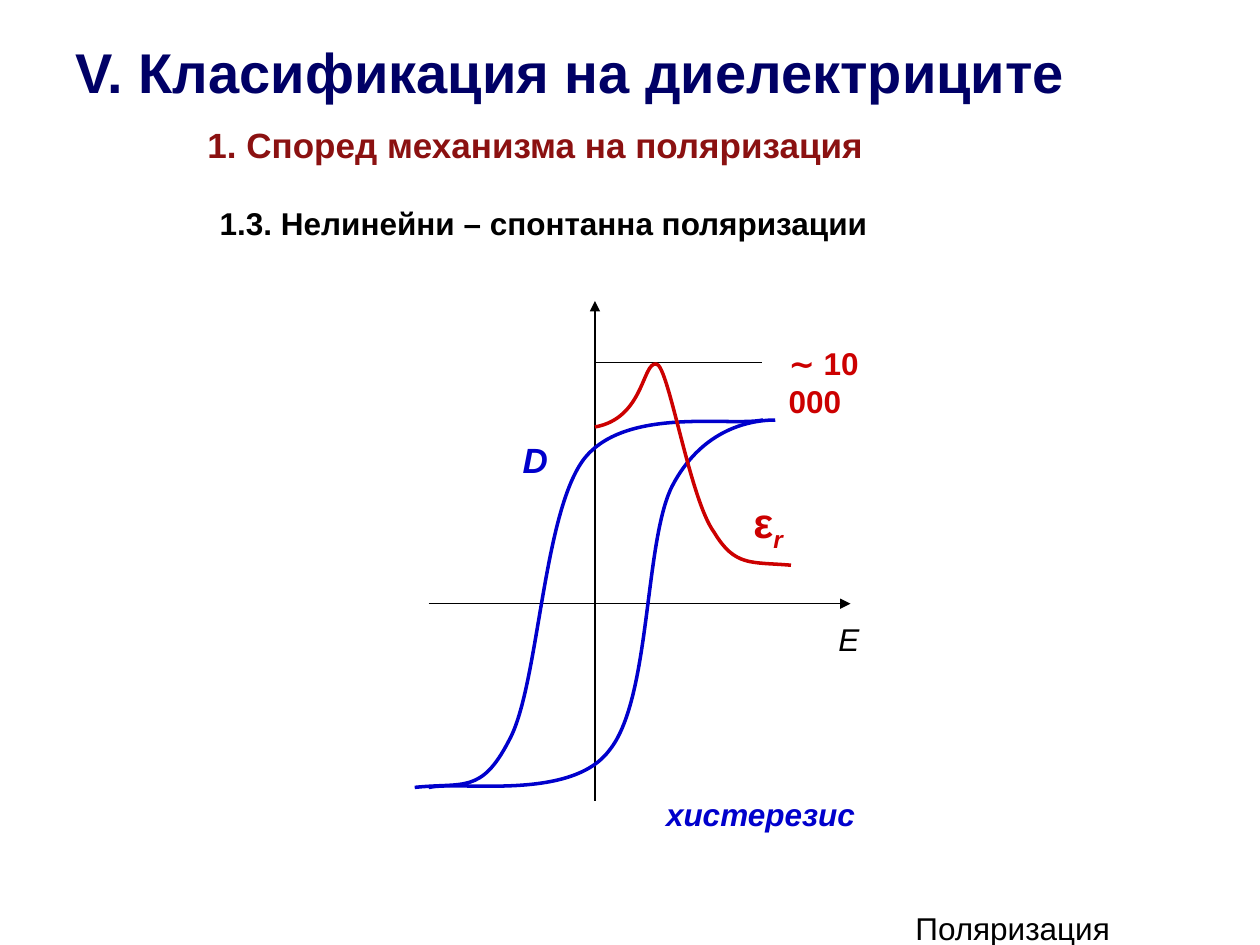
from pptx import Presentation
from pptx.dml.color import RGBColor
from pptx.enum.shapes import MSO_CONNECTOR
from pptx.oxml.ns import qn
from pptx.util import Pt
from lxml.etree import SubElement

BLACK = RGBColor(0, 0, 0)
NAVY = RGBColor(0x00, 0x00, 0x66)
MAROON = RGBColor(0x8B, 0x11, 0x11)
RED = RGBColor(0xCC, 0x00, 0x00)
BLUE = RGBColor(0x00, 0x00, 0xCC)

deck = Presentation()
deck.slide_width, deck.slide_height = Pt(720), Pt(540)
slide = deck.slides.add_slide(deck.slide_layouts[6])
shapes = slide.shapes


def style(run, size, color, bold, italic):
    font = run.font
    font.name, font.size = "Arial", Pt(size)
    font.bold, font.italic = bold, italic
    font.color.rgb = color


def label(text, left, top, width, height, size, color, bold=True, italic=False):
    box = shapes.add_textbox(Pt(left), Pt(top), Pt(width), Pt(height))
    frame = box.text_frame
    frame.word_wrap = True
    frame.text = text
    para = frame.paragraphs[0]
    style(para.runs[0], size, color, bold, italic)
    return para


label("Поляризация", 516, 516, 168, 19.5, 18, BLACK, False)
label("V. Класификация на диелектриците", 36, 18, 582, 45.5, 32, NAVY)
label("1. Според механизма на поляризация", 111.5, 67, 391, 31, 20, MAROON)
label("1.3. Нелинейни – спонтанна поляризации", 118.5, 113, 410, 29, 18, BLACK)
label("E", 472, 350.5, 27, 29, 18, BLACK, False, True)
para = label("ε", 423.5, 280, 58, 36, 24, RED)
sub = para.add_run()
sub.text = "r"
style(sub, 24, RED, True, True)
sub.font._element.set("baseline", "-25000")
label("D", 291.5, 247, 29, 31, 20, BLUE, True, True)
label("∼ 10 000", 443.5, 193, 84, 29, 18, RED)

for x1, y1, x2, y2, arrow in [
    (245, 345, 486, 345, True),
    (340, 457.5, 340, 172, True),
    (340, 207, 435.5, 207, False),
]:
    line = shapes.add_connector(MSO_CONNECTOR.STRAIGHT, Pt(x1), Pt(y1), Pt(x2), Pt(y2))
    line.line.color.rgb = BLACK
    line.line.width = Pt(0.75)
    if arrow:
        tip = SubElement(line.line._get_or_add_ln(), qn("a:tailEnd"))
        tip.set("type", "triangle")
    SubElement(line._element.spPr, qn("a:effectLst"))

upper = [
    (435.5, 240), (418.5, 244), (358.5, 232), (334.5, 262.5), (310.5, 293),
    (307.5, 391.5), (291, 423), (275, 454.5), (265, 447), (237, 450),
]
lower = [
    (245, 450), (262, 446.5), (325.5, 457.5), (348.5, 429), (372, 400.5),
    (368.5, 310.5), (384.5, 278.5), (400.5, 247), (426, 240.5), (443, 240),
]
peak = [
    (340, 243.5), (368.5, 239), (367, 207), (375, 207.5), (381.5, 208),
    (394.5, 285, ), (407.5, 304.5), (420.5, 324), (429, 321), (452, 323),
]

for points, color in [(upper, BLUE), (lower, BLUE), (peak, RED)]:
    form = shapes.build_freeform(*points[0], scale=Pt(1))
    form.add_line_segments(points[1:], close=False)
    curve = form.convert_to_shape()
    curve.shadow.inherit = False
    curve.fill.background()
    curve.line.color.rgb = color
    curve.line.width = Pt(2)
    track = next(curve._element.iter(qn("a:path")))
    steps = track.findall(qn("a:lnTo"))
    for i in range(0, len(steps), 3):
        bend = SubElement(track, qn("a:cubicBezTo"))
        for step in steps[i:i + 3]:
            bend.append(step[0])
            track.remove(step)

label("хистерезис", 373.5, 450.5, 123, 29, 18, BLUE, True, True)

deck.save("out.pptx")
